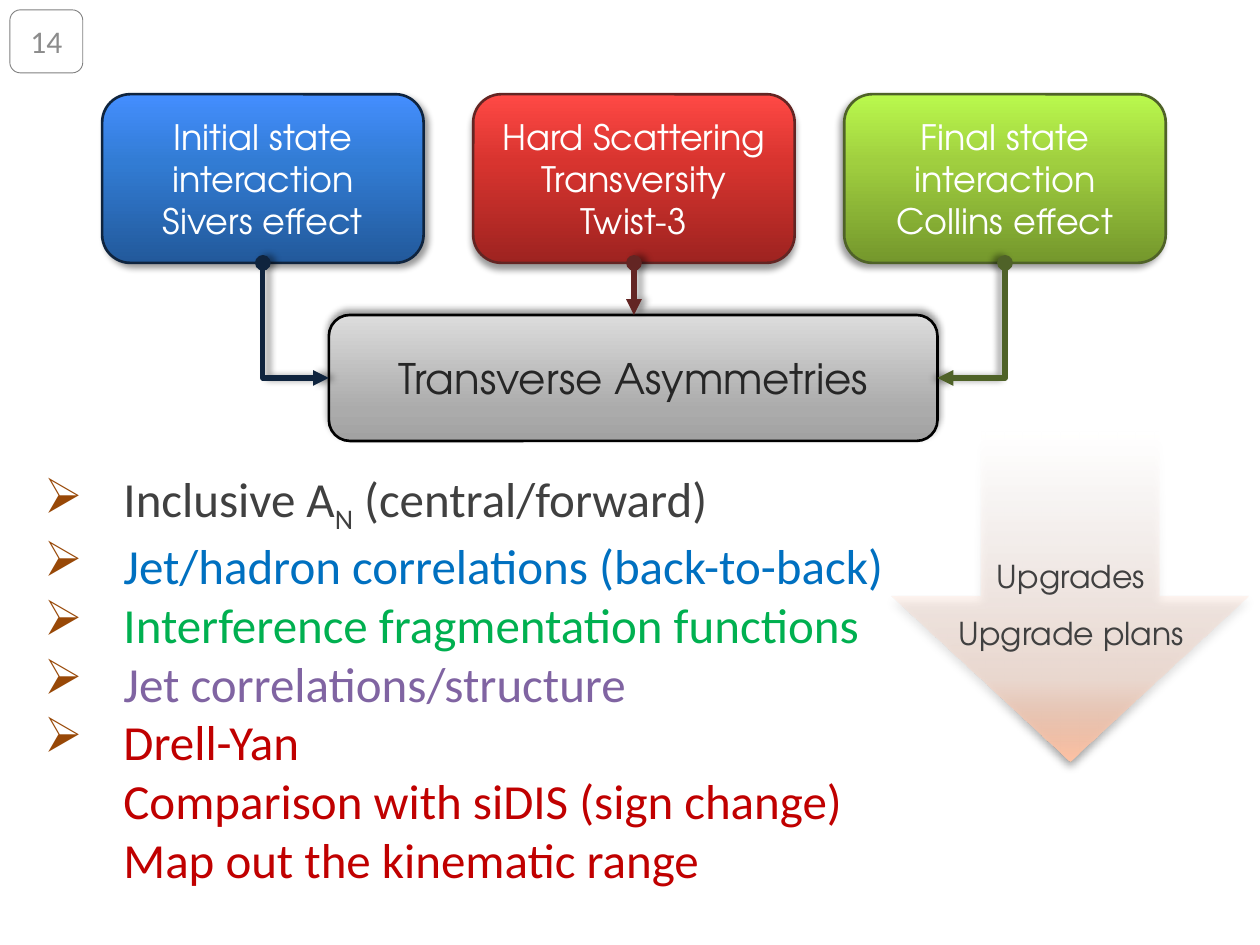
from lxml import etree
from pptx import Presentation, util as u
from pptx.dml.color import RGBColor
from pptx.enum import shapes, text
from pptx.oxml.ns import qn

GEO, SANS = "TeX Gyre Adventor", "Calibri"
CENTER = text.PP_ALIGN.CENTER


def rgb(value):
    """Return the colour for a hex string."""
    return RGBColor.from_string(value)


def sub(parent, tag, **attrs):
    """Append a DrawingML child with attributes."""
    el = etree.SubElement(parent, qn("a:" + tag))
    for name, value in attrs.items():
        el.set(name, str(value))
    return el


def add_color(parent, color, alpha=100):
    """Append a colour with an opacity in percent."""
    el = sub(parent, "srgbClr", val=color)
    if alpha < 100:
        sub(el, "alpha", val=alpha * 1000)


def add_shadow(sp, angle, blur=4, dist=3):
    """Give a shape or connector a soft black shadow."""
    shadow = sub(sub(sp._element.spPr, "effectLst"), "outerShdw",
                 blurRad=u.Pt(blur), dist=u.Pt(dist),
                 dir=angle * 60000, rotWithShape=0)
    add_color(shadow, "000000", 40)


def set_gradient(sp, stops):
    """Fill a shape from bottom to top with (position, colour, opacity) stops."""
    sp.fill.gradient()
    sp.fill.gradient_angle = 90
    stop_list = sp._element.spPr.find(qn("a:gradFill")).find(qn("a:gsLst"))
    for old in list(stop_list):
        stop_list.remove(old)
    for pos, color, *alpha in stops:
        add_color(sub(stop_list, "gs", pos=pos * 1000), color, *alpha)


def set_line(line, color, width):
    """Set a line's colour and width in points."""
    line.color.rgb = rgb(color)
    line.width = u.Pt(width)


def add_run(p, content, size, font, color):
    """Add a formatted run to a paragraph."""
    r = p.add_run()
    r.text = content
    for name, value in {"size": u.Pt(size), "name": font}.items():
        setattr(r.font, name, value)
    r.font.color.rgb = rgb(color)
    return r


def add_paragraphs(tf, count):
    """Return the given number of paragraphs of an empty text frame."""
    return [tf.paragraphs[0]] + [tf.add_paragraph() for _ in range(count - 1)]


def add_centered(tf, lines, size, font, color, spacing=None):
    """Write centred paragraphs."""
    for p, line in zip(add_paragraphs(tf, len(lines)), lines):
        p.alignment, p.line_spacing = CENTER, spacing
        add_run(p, line, size, font, color)


def add_box(s, kind, box):
    """Add a preset shape without an inherited shadow."""
    return s.shapes.add_shape(kind, *map(u.Cm, box))


def add_label_box(s, box, lines, size, font, color, line):
    """Add a rounded box with centred text and an outline."""
    sp = add_box(s, shapes.MSO_SHAPE.ROUNDED_RECTANGLE, box)
    set_line(sp.line, *line)
    tf = sp.text_frame
    fmt = {"word_wrap": True, "vertical_anchor": text.MSO_ANCHOR.MIDDLE}
    fmt.update({"margin_" + side: u.Cm(0.25)
                for side in ("left", "top", "right", "bottom")})
    for name, value in fmt.items():
        setattr(tf, name, value)
    add_centered(tf, lines, size, font, color)
    return sp


def add_text(s, box):
    """Add a growing text box and return its frame."""
    tf = s.shapes.add_textbox(*map(u.Cm, box)).text_frame
    tf.word_wrap = False
    tf.auto_size = text.MSO_AUTO_SIZE.SHAPE_TO_FIT_TEXT
    return tf


def add_arrow(s, start, end, color, angle):
    """Link two points, going down first and then sideways."""
    (x1, y1), (x2, y2) = start, end
    dx, dy = x2 - x1, y2 - y1
    kind, points = shapes.MSO_CONNECTOR.STRAIGHT, (x1, y1, x2, y2)
    if dx:
        kind = shapes.MSO_CONNECTOR.ELBOW
        cx, cy, half = (x1 + x2) / 2, (y1 + y2) / 2, abs(dx) / 2
        side = 1 if dx > 0 else -1
        points = (cx + side * dy / 2, cy - half, cx - side * dy / 2, cy + half)
    c = s.shapes.add_connector(kind, *map(u.Cm, points))
    if dx:
        pr = c._element.spPr
        pr.find(qn("a:prstGeom")).set("prst", "bentConnector2")
        pr.find(qn("a:xfrm")).set("rot", str((270 if dx > 0 else 90) * 60000))
    set_line(c.line, color, 3)
    ln = c.line._get_or_add_ln()
    sub(ln, "headEnd", type="oval")
    sub(ln, "tailEnd", type="triangle")
    add_shadow(c, angle)


def add_bullets(tf, items):
    """Write arrow-bulleted paragraphs of (colour, lines)."""
    for p, (color, lines) in zip(add_paragraphs(tf, len(items)), items):
        pr = p._p.get_or_add_pPr()
        pr.set("marL", str(u.Cm(1.6)))
        pr.set("indent", str(u.Cm(-1.6)))
        add_color(sub(pr, "buClr"), "984807")
        sub(pr, "buChar", char="➢")
        for i, line in enumerate(lines):
            if i:
                p.add_line_break()
            for j, part in enumerate(line.split("|")):
                r = add_run(p, part, 28, SANS, color)
                if j == 1:
                    r._r.get_or_add_rPr().set("baseline", "-25000")


def main():
    """Build the slide."""
    prs = Presentation()
    prs.slide_width, prs.slide_height = u.Cm(25.4), u.Cm(19.05)
    s = prs.slides.add_slide(prs.slide_layouts[6])

    left, top, width, height, step = 2.06, 1.9, 6.48, 3.4, 7.48
    target = (6.63, 6.35, 12.27, 2.54)
    right, middle = target[0] + target[2], target[1] + target[3] / 2
    effects = [
        (["Initial state interaction", "Sivers effect"],
         ("22599B", "327CD4", "448EFF"), "0F243E", 45, (target[0], middle), 0),
        (["Hard Scattering", "Transversity", "Twist-3"],
         ("9E2320", "D8342F", "FF4945"), "632523", 90, None, 0),
        (["Final state interaction", "Collins effect"],
         ("74972C", "A0CF3F", "BAF94D"), "4F6228", 135, (right, middle), 180),
    ]
    for i, (lines, colors, edge, angle, _, _) in enumerate(effects):
        sp = add_label_box(s, (left + i * step, top, width, height), lines,
                           20, GEO, "FFFFFF", (edge, 1.5))
        set_gradient(sp, zip((0, 60, 100), colors))
        add_shadow(sp, angle)

    sp = add_label_box(s, target, ["Transverse Asymmetries"], 24, GEO,
                       "262626", ("000000", 1.5))
    set_gradient(sp, [(0, "A2A2A2"), (25, "ABABAB"), (100, "DCDCDC")])
    add_shadow(sp, 270)

    add_bullets(add_text(s, (0.64, 9.32, 17.73, 8.64)), [
        ("404040", ["Inclusive A|N| (central/forward)"]),
        ("0070C0", ["Jet/hadron correlations (back-to-back)"]),
        ("00B050", ["Interference fragmentation functions"]),
        ("8064A2", ["Jet correlations/structure"]),
        ("C00000", ["Drell-Yan", "Comparison with siDIS (sign change)",
                    "Map out the kinematic range"]),
    ])

    sp = add_box(s, shapes.MSO_SHAPE.DOWN_ARROW, (17.98, 8.69, 7.19, 6.65))
    set_gradient(sp, [(0, "FFC2A3"), (25, "FFC7AC", 32), (100, "FFE6DB", 0)])
    sp.line.fill.background()
    add_shadow(sp, 90, 5.2)

    for i, (_, _, edge, _, end, angle) in enumerate(effects):
        x = left + i * step + width / 2
        add_arrow(s, (x, top + height), end or (x, target[1]), edge, angle)

    add_centered(add_text(s, (19.05, 10.72, 5.08, 2.41)),
                 ["Upgrades", "Upgrade plans"], 18, GEO, "404040", 1.5)

    sp = add_label_box(s, (0.2, 0.2, 1.47, 1.27), ["14"], 18, SANS, "8C8C8C",
                       ("808080", 0.5))
    sp.fill.solid()
    sp.fill.fore_color.rgb = rgb("FFFFFF")
    sp.shadow.inherit = False

    prs.save("out.pptx")


if __name__ == "__main__":
    main()
